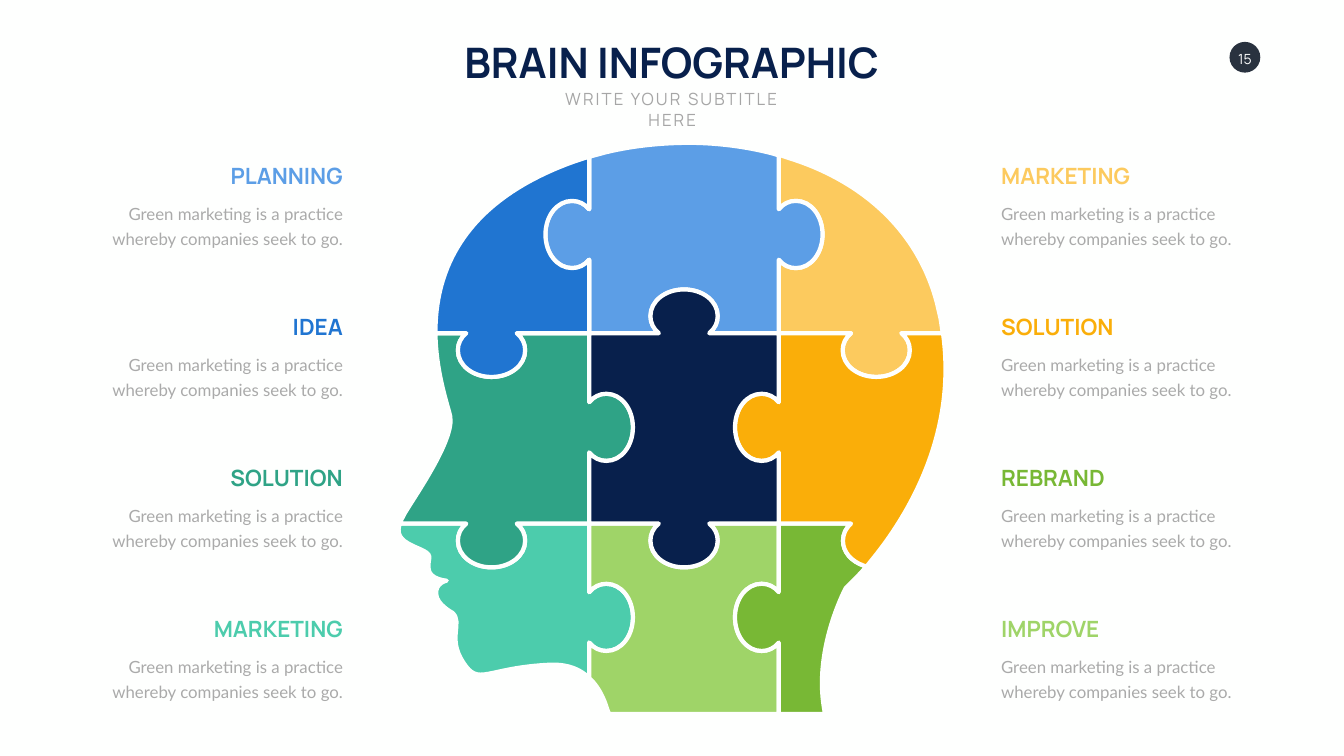
import dataclasses

import lxml.etree
import pptx
import pptx.dml.color
import pptx.enum.shapes
import pptx.enum.text
import pptx.oxml.ns
import pptx.util

Pt = pptx.util.Pt
qn = pptx.oxml.ns.qn
ALIGN = pptx.enum.text.PP_ALIGN
ANCHOR = pptx.enum.text.MSO_ANCHOR


@dataclasses.dataclass(frozen=True)
class Theme:
    paper: str = "FEFFFE"
    white: str = "FFFFFF"
    badge: str = "29323F"
    navy: str = "08204C"
    sky: str = "5C9EE6"
    blue: str = "2075D1"
    teal: str = "2FA386"
    mint: str = "4CCCAC"
    sand: str = "FCCA5E"
    amber: str = "FAAE09"
    green: str = "78B835"
    lime: str = "9FD468"
    subtitle: str = "A6A6A6"
    body: str = "AAAAAA"
    seam: float = 6
    fonts: dict = dataclasses.field(default_factory=lambda: {
        "title": {"name": "Manrope", "size": Pt(60), "bold": True},
        "subtitle": {"name": "Manrope", "size": Pt(24), "bold": False},
        "heading": {"name": "Manrope", "size": Pt(32), "bold": True},
        "body": {"name": "Lato", "size": Pt(24), "bold": False},
        "number": {"name": "Manrope", "size": Pt(20), "bold": False},
    })


def rgb(value):
    return pptx.dml.color.RGBColor.from_string(value)


def apply(target, values):
    for name, value in values.items():
        setattr(target, name, value)


HEADINGS = {"E": (1, 0), "S": (0, 1), "W": (-1, 0), "N": (0, -1)}
HALF_KNOB = [(-36, 0), (-44, 6.5), (-48, 15), (-48, 24.5), (-48, 46), (-26.5, 62.5), (0, 62.5)]
KNOB = HALF_KNOB + [(-a, o) for a, o in HALF_KNOB[-2::-1]]
OUT, IN = 1, -1


def knob(x, y, heading, side):
    dx, dy = HEADINGS[heading]
    pts = [(x + a * dx + side * o * dy, y + a * dy - side * o * dx) for a, o in KNOB]
    curves = [sum(pts[i:i + 3], ()) for i in range(1, len(pts), 3)]
    return [pts[0], *curves]


class Deck:
    def __init__(self, theme, width, height):
        self.theme = theme
        self.prs = pptx.Presentation()
        self.prs.slide_width, self.prs.slide_height = Pt(width), Pt(height)
        self.s = self.prs.slides.add_slide(self.prs.slide_layouts[6])
        self.s.background.fill.solid()
        self.s.background.fill.fore_color.rgb = rgb(theme.paper)

    def paint(self, sp, fill):
        sp.shadow.inherit = False
        sp.fill.solid()
        sp.fill.fore_color.rgb = rgb(fill)

    def disc(self, x, y, size, fill):
        oval = pptx.enum.shapes.MSO_SHAPE.OVAL
        sp = self.s.shapes.add_shape(oval, Pt(x), Pt(y), Pt(size), Pt(size))
        self.paint(sp, fill)
        sp.line.fill.background()

    def piece(self, outline, fill):
        ends = [(Pt(step[-2]), Pt(step[-1])) for step in outline]
        builder = self.s.shapes.build_freeform(*ends[0])
        builder.add_line_segments(ends[1:], close=True)
        sp = builder.convert_to_shape()
        self.bend(sp, outline[1:])
        self.paint(sp, fill)
        sp.line.color.rgb = rgb(self.theme.paper)
        sp.line.width = Pt(self.theme.seam)

    def bend(self, sp, steps):
        for node, step in zip(list(sp._element.iter(qn("a:lnTo"))), steps):
            if len(step) == 6:
                curve = lxml.etree.Element(qn("a:cubicBezTo"))
                for x, y in zip(step[::2], step[1::2]):
                    lxml.etree.SubElement(curve, qn("a:pt"),
                                          x=str(Pt(x) - sp.left), y=str(Pt(y) - sp.top))
                node.getparent().replace(node, curve)

    def text(self, box, text, font, color, frame=None, para=None, spacing=None):
        sp = self.s.shapes.add_textbox(*map(Pt, box))
        tf = sp.text_frame
        apply(tf, {"word_wrap": True, **(frame or {})})
        p = tf.paragraphs[0]
        apply(p, para or {})
        r = p.add_run()
        r.text = text
        apply(r.font, self.theme.fonts[font])
        r.font.color.rgb = rgb(color)
        if spacing:
            r._r.get_or_add_rPr().set("spc", str(spacing * 100))

    def topic(self, x, y, heading, color, align):
        self.text((x, y, 359.3, 46), heading, "heading", color,
                  {"vertical_anchor": ANCHOR.BOTTOM}, {"alignment": align})
        self.text((x, y + 54, 359.3, 74),
                  "Green marketing is a practice whereby companies seek to go.",
                  "body", self.theme.body, None,
                  {"alignment": align, "line_spacing": Pt(35), "space_before": Pt(4.8)})


def head_pieces(t):
    x1, x2, y1, y2, base = 841.5, 1112.25, 476, 748, 1020
    kx1, kx2, kx3 = 702, 977, 1251.5
    ky1, ky2, ky3 = 335, 610.5, 882
    return [
        (t.mint, [(571.5, y2), *knob(kx1, y2, "E", IN), (x1, y2), *knob(x1, ky3, "S", OUT),
                  (x1, 968.5), (828.5, 956, 811.5, 949, 787.5, 949.5),
                  (693.5, 953.5, 684, 981.5, 661.5, 946),
                  (638.5, 911, 661.5, 890.5, 646.5, 875.5),
                  (646.5, 875.5, 623, 863.5, 623, 848),
                  (622, 832.5, 638, 829.5, 638, 829.5),
                  (638, 829.5, 612.5, 828, 612, 811.5),
                  (610.5, 795, 622, 793.5, 595.5, 782.5),
                  (576, 774, 566.5, 767, 570, 751.5)]),
        (t.lime, [(x1, y2), *knob(kx2, y2, "E", IN), (x2, y2), *knob(x2, ky3, "S", IN),
                  (x2, base), (870, base), (867.5, 1014),
                  (862.5, 997, 854.5, 980.5, x1, 968.5), *knob(x1, ky3, "N", IN)]),
        (t.teal, [(622, y1), *knob(kx1, y1, "E", IN), (x1, y1), *knob(x1, ky2, "S", OUT),
                  (x1, y2), *knob(kx1, y2, "W", OUT), (571, y2), (573, 743),
                  (574.5, 740, 576, 737.5, 578, 733.5),
                  (594, 706.5, 649.5, 628, 643, 594.5),
                  (640, 580.5, 623.5, 535, 622, 480)]),
        (t.sand, [(x2, 221), (1130.5, 227), (1230, 259, 1311, 327.5, 1338.5, 434),
                  (1340, 441.5, 1342, 448.5, 1343.5, 456), (1346.5, y1),
                  *knob(kx3, y1, "W", OUT), (x2, y1), *knob(x2, ky1, "N", IN)]),
        (t.green, [(x2, y2), (1215.5, y2), (1208, 754.5, 1204, 763, 1204, 772.5),
                   (1204, 788.5, 1216, 802, 1233.5, 808), (1237.5, 809.5),
                   (1219.5, 829.5, 1208, 840, 1208, 840),
                   (1208, 840, 1159, 931, 1178.5, base), (x2, base),
                   *knob(x2, ky3, "N", OUT)]),
        (t.amber, [(x2, y1), *knob(kx3, y1, "E", IN), (1346.5, y1), (1347, 477.5),
                   (1367.5, 626.5, 1291, 744.5, 1243.5, 802), (1237.5, 809.5), (1233.5, 808),
                   (1216, 802, 1204, 788.5, 1204, 772.5),
                   (1204, 763, 1208, 754.5, 1215.5, y2), (x2, y2),
                   *knob(x2, ky2, "N", OUT)]),
        (t.sky, [(x1, 224), (865.5, 217.5), (905, 208, 946, 204, 987, 204),
                 (1026.5, 204.5, 1065.5, 209.5, 1102.5, 219), (x2, 222),
                 *knob(x2, ky1, "S", OUT), (x2, y1), *knob(kx2, y1, "W", IN), (x1, y1),
                 *knob(x1, ky1, "N", OUT)]),
        (t.blue, [(x1, 224), *knob(x1, ky1, "S", IN), (x1, y1), *knob(kx1, y1, "W", OUT),
                  (622, y1), (622, 468), (623.5, 399.5, 650, 318, 754.5, 260),
                  (780, 246, 807, 234.5, 836, 225.5)]),
        (t.navy, [(x1, y1), *knob(kx2, y1, "E", OUT), (x2, y1), *knob(x2, ky2, "S", IN),
                  (x2, y2), *knob(kx2, y2, "W", OUT), (x1, y2), *knob(x1, ky2, "N", IN)]),
    ]


def main():
    t = Theme()
    deck = Deck(t, 1919.52, 1080)
    center = {"alignment": ALIGN.CENTER}
    free = {"word_wrap": False, "auto_size": pptx.enum.text.MSO_AUTO_SIZE.SHAPE_TO_FIT_TEXT}
    flush = dict.fromkeys(("margin_left", "margin_top", "margin_right", "margin_bottom"), 0)

    deck.disc(1756, 59.8, 44, t.badge)
    deck.text((1763.3, 71.3, 29.5, 24.5), "15", "number", t.white,
              {**free, **flush, "vertical_anchor": ANCHOR.MIDDLE}, center)
    for color, outline in head_pieces(t):
        deck.piece(outline, color)
    deck.text((641.5, 48.2, 635.8, 80), "BRAIN INFOGRAPHIC", "title", t.navy, free, center)
    deck.text((764.6, 123.8, 391, 36), "WRITE YOUR SUBTITLE HERE", "subtitle", t.subtitle,
              free, center, spacing=3)

    columns = [
        (1422.7, ALIGN.LEFT, [("MARKETING", t.sand), ("SOLUTION", t.amber),
                              ("REBRAND", t.green), ("IMPROVE", t.lime)]),
        (137.5, ALIGN.RIGHT, [("PLANNING", t.sky), ("IDEA", t.blue),
                              ("SOLUTION", t.teal), ("MARKETING", t.mint)]),
    ]
    for x, align, topics in columns:
        for row, (heading, color) in enumerate(topics):
            deck.topic(x, 227.5 + 215.8 * row, heading, color, align)
    deck.prs.save("out.pptx")


if __name__ == "__main__":
    main()
